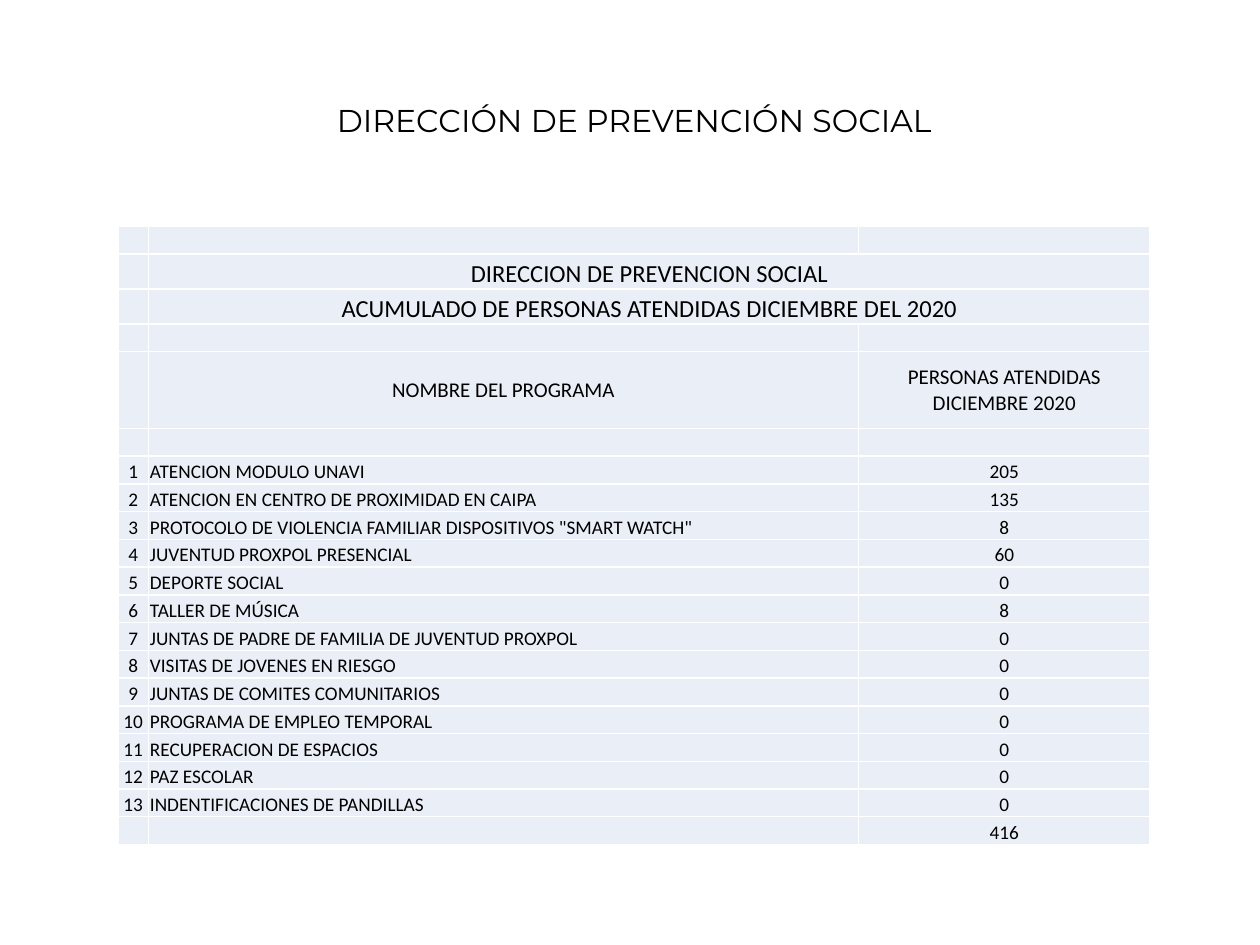
from dataclasses import dataclass

import lxml.etree
import pptx
import pptx.dml.color
import pptx.enum.text
import pptx.oxml.ns
import pptx.table
import pptx.util

Pt = pptx.util.Pt
Align = pptx.enum.text.PP_ALIGN
Anchor = pptx.enum.text.MSO_ANCHOR
qn = pptx.oxml.ns.qn

BLACK = pptx.dml.color.RGBColor(0x00, 0x00, 0x00)
WHITE = pptx.dml.color.RGBColor(0xFF, 0xFF, 0xFF)
PALE_BLUE = pptx.dml.color.RGBColor(0xEA, 0xEF, 0xF7)

COLUMN_WIDTHS = (17.7, 405.5, 166.8)
ROW_HEIGHT = 15.85


@dataclass(frozen=True)
class TableRow:
    texts: tuple[str, str, str] = ("", "", "")
    height: float = ROW_HEIGHT
    size: int = 11
    anchor: Anchor = Anchor.BOTTOM
    name_align: Align = Align.CENTER
    merged: bool = False


PROGRAMS = (
    ("ATENCION MODULO UNAVI", 205),
    ("ATENCION EN CENTRO DE PROXIMIDAD EN CAIPA", 135),
    ('PROTOCOLO DE VIOLENCIA FAMILIAR DISPOSITIVOS "SMART WATCH"', 8),
    ("JUVENTUD PROXPOL PRESENCIAL", 60),
    ("DEPORTE SOCIAL", 0),
    ("TALLER DE MÚSICA", 8),
    ("JUNTAS DE PADRE DE FAMILIA DE JUVENTUD PROXPOL", 0),
    ("VISITAS DE JOVENES EN RIESGO", 0),
    ("JUNTAS DE COMITES COMUNITARIOS", 0),
    ("PROGRAMA DE EMPLEO TEMPORAL", 0),
    ("RECUPERACION DE ESPACIOS", 0),
    ("PAZ ESCOLAR", 0),
    ("INDENTIFICACIONES DE PANDILLAS", 0),
)


def heading_row(text: str) -> TableRow:
    return TableRow(("", text, ""), height=20, size=14, merged=True)


ROWS = (
    TableRow(),
    heading_row("DIRECCION DE PREVENCION SOCIAL"),
    heading_row("ACUMULADO DE PERSONAS ATENDIDAS DICIEMBRE DEL 2020"),
    TableRow(),
    TableRow(
        ("", "NOMBRE DEL PROGRAMA", "PERSONAS ATENDIDAS DICIEMBRE 2020"),
        height=44, size=12, anchor=Anchor.MIDDLE,
    ),
    TableRow(),
    *(
        TableRow((str(number), name, str(people)), name_align=Align.LEFT)
        for number, (name, people) in enumerate(PROGRAMS, start=1)
    ),
    TableRow(("", "", str(sum(people for _, people in PROGRAMS)))),
)


def add_borders(cell: pptx.table._Cell) -> None:
    properties = cell._tc.get_or_add_tcPr()
    for side in ("lnL", "lnR", "lnT", "lnB"):
        line = lxml.etree.SubElement(properties, qn(f"a:{side}"), w=str(Pt(1)))
        fill = lxml.etree.SubElement(line, qn("a:solidFill"))
        lxml.etree.SubElement(fill, qn("a:srgbClr"), val=str(WHITE))


def format_cell(cell: pptx.table._Cell, text: str, row: TableRow, align: Align) -> None:
    add_borders(cell)
    cell.fill.solid()
    cell.fill.fore_color.rgb = PALE_BLUE
    cell.margin_left = cell.margin_right = cell.margin_top = Pt(0.7)
    cell.margin_bottom = Pt(0)
    cell.vertical_anchor = row.anchor
    paragraph = cell.text_frame.paragraphs[0]
    paragraph.text = text
    paragraph.alignment = align
    for span in paragraph.runs:
        span.font.name = "Calibri"
        span.font.size = Pt(row.size)
        span.font.bold = False
        span.font.color.rgb = BLACK
    if not text:
        # An empty cell takes its line height from the paragraph end mark.
        lxml.etree.SubElement(paragraph._p, qn("a:endParaRPr"), sz=str(row.size * 100))


def add_title(page) -> None:
    title = page.shapes.title
    title.left, title.top, title.width, title.height = Pt(116), Pt(54), Pt(493), Pt(29)
    frame = title.text_frame
    frame.text = "DIRECCIÓN DE PREVENCIÓN SOCIAL"
    frame.word_wrap = True
    frame.auto_size = pptx.enum.text.MSO_AUTO_SIZE.SHAPE_TO_FIT_TEXT
    frame.vertical_anchor = Anchor.TOP
    paragraph = frame.paragraphs[0]
    paragraph.alignment = Align.CENTER
    span = paragraph.runs[0]
    span.font.name = "Montserrat"
    span.font.size = Pt(18)
    span.font.color.rgb = BLACK


def add_program_table(page) -> None:
    table = page.shapes.add_table(
        len(ROWS), len(COLUMN_WIDTHS), Pt(67.3), Pt(129.2),
        Pt(sum(COLUMN_WIDTHS)), Pt(sum(row.height for row in ROWS)),
    ).table
    table.first_row = False
    table.horz_banding = False
    for column, width in zip(table.columns, COLUMN_WIDTHS):
        column.width = Pt(width)
    for index, row in enumerate(ROWS):
        table.rows[index].height = Pt(row.height)
        aligns = (Align.CENTER, row.name_align, Align.CENTER)
        for column, (text, align) in enumerate(zip(row.texts, aligns)):
            format_cell(table.cell(index, column), text, row, align)
        if row.merged:
            table.cell(index, 1).merge(table.cell(index, 2))


def main() -> None:
    deck = pptx.Presentation()
    deck.slide_width, deck.slide_height = Pt(720), Pt(540)
    page = deck.slides.add_slide(deck.slide_layouts.get_by_name("Title Only"))
    add_title(page)
    add_program_table(page)
    deck.save("out.pptx")


if __name__ == "__main__":
    main()
